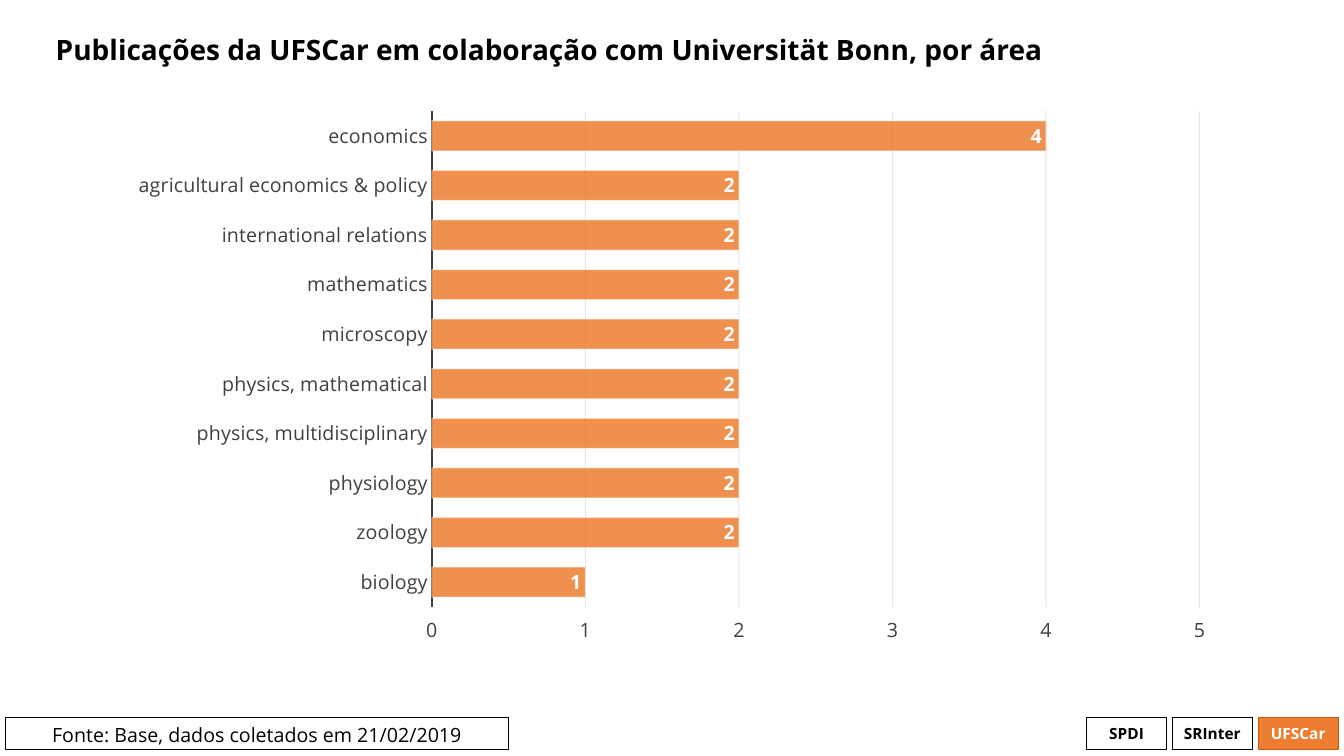
from lxml import etree
from pptx import Presentation
from pptx.chart.data import CategoryChartData
from pptx.dml.color import RGBColor
from pptx.enum.chart import XL_CHART_TYPE, XL_LABEL_POSITION, XL_TICK_LABEL_POSITION, XL_TICK_MARK
from pptx.enum.shapes import MSO_SHAPE
from pptx.enum.text import MSO_ANCHOR, MSO_AUTO_SIZE, PP_ALIGN
from pptx.oxml import parse_xml
from pptx.oxml.ns import nsdecls, qn
from pptx.util import Pt

RECT = MSO_SHAPE.RECTANGLE
BARS = XL_CHART_TYPE.BAR_CLUSTERED
NO_TICK = XL_TICK_MARK.NONE
HIGH = XL_TICK_LABEL_POSITION.HIGH
INSIDE_END = XL_LABEL_POSITION.INSIDE_END
NO_FIT = MSO_AUTO_SIZE.NONE
TOP, MIDDLE = MSO_ANCHOR.TOP, MSO_ANCHOR.MIDDLE
LEFT, CENTER = PP_ALIGN.LEFT, PP_ALIGN.CENTER
FONT = "Open Sans"
COLORS = {
    "black": "000000",
    "white": "FFFFFF",
    "orange": "ED7D31",
    "rust": "C55A11",
    "axis": "404040",
    "grid": "0D0D0D",
}


def set_font(font, size, color, bold=False):
    values = {"name": FONT, "size": Pt(size), "bold": bold}
    for name, value in values.items():
        setattr(font, name, value)
    font.color.rgb = RGBColor.from_string(COLORS[color])


def set_paint(fill, color, alpha=100):
    fill.solid()
    fill.fore_color.rgb = RGBColor.from_string(COLORS[color])
    if alpha < 100:
        clr = fill._xPr.find(qn("a:solidFill"))[0]
        etree.SubElement(clr, qn("a:alpha")).set("val", str(alpha * 1000))


prs = Presentation()
prs.slide_width, prs.slide_height = Pt(960), Pt(540)
slide = prs.slides.add_slide(prs.slide_layouts[5])

title = slide.shapes.title
box = {"left": 32.6, "top": 4.3, "width": 893.5, "height": 65.5}
for name, value in box.items():
    setattr(title, name, Pt(value))
tf = title.text_frame
tf.text = "Publicações da UFSCar em colaboração com Universität Bonn, por área"
tf.auto_size = NO_FIT
tf.word_wrap = True
tf.vertical_anchor = MIDDLE
p = tf.paragraphs[0]
p.alignment = LEFT
p.line_spacing = 0.9
set_font(p.runs[0].font, 20, "black", True)

areas = {
    "economics": 4,
    "agricultural economics & policy": 2,
    "international relations": 2,
    "mathematics": 2,
    "microscopy": 2,
    "physics, mathematical": 2,
    "physics, multidisciplinary": 2,
    "physiology": 2,
    "zoology": 2,
    "biology": 1,
}
data = CategoryChartData()
data.categories = list(areas)
data.add_series("Series 1", list(areas.values()))
chart_x, chart_y, chart_w, chart_h = 82.8, 71.3, 793.4, 396.7
chart = slide.shapes.add_chart(
    BARS, Pt(chart_x), Pt(chart_y), Pt(chart_w), Pt(chart_h), data).chart
chart.has_legend = False
chart.has_title = False
set_font(chart.font, 14, "black")

plot_box = {
    "x": (308.5 - chart_x) / chart_w,
    "y": (79.3 - chart_y) / chart_h,
    "w": 548.4 / chart_w,
    "h": 354.3 / chart_h,
}
area = chart._chartSpace.chart.plotArea
for old in area.findall(qn("c:layout")):
    area.remove(old)
parts = "".join(f'<c:{k} val="{v:.4f}"/>' for k, v in plot_box.items())
area.insert(0, parse_xml(
    f'<c:layout {nsdecls("c")}><c:manualLayout><c:layoutTarget val="inner"/>'
    f'<c:xMode val="edge"/><c:yMode val="edge"/>{parts}</c:manualLayout></c:layout>'))

cat_axis, val_axis = chart.category_axis, chart.value_axis
for axis in (cat_axis, val_axis):
    axis.major_tick_mark = axis.minor_tick_mark = NO_TICK
    set_font(axis.tick_labels.font, 14, "axis")
cat_axis.reverse_order = True
cat_axis.format.line.width = Pt(1.5)
set_paint(cat_axis.format.line.fill, "axis")
scale = {"minimum_scale": 0, "maximum_scale": 5, "major_unit": 1,
         "tick_label_position": HIGH}
for name, value in scale.items():
    setattr(val_axis, name, value)
val_axis.format.line.fill.background()
grid = val_axis.major_gridlines.format.line
grid.width = Pt(0.75)
set_paint(grid.fill, "grid", 10)

plot = chart.plots[0]
plot.gap_width = 65
plot.vary_by_categories = False
bars = plot.series[0]
bars.invert_if_negative = False
set_paint(bars.format.fill, "orange", 85)
bars.format.line.width = Pt(0.75)
set_paint(bars.format.line.fill, "white", 50)
labels = bars.data_labels
labels.show_value = True
labels.position = INSIDE_END
set_font(labels.font, 14, "white", True)

boxes = [("Fonte: Base, dados coletados em 21/02/2019",
          4, 359.3, 14, False, TOP, None, "black", "black")]
tags = [("SPDI", None, "black", "black"),
        ("SRInter", None, "black", "black"),
        ("UFSCar", "orange", "rust", "white")]
for i, (text, fill, line, color) in enumerate(tags):
    boxes.append((text, 776.2 + 61.3 * i, 57.1, 11, True, MIDDLE, fill, line, color))

for text, x, w, size, bold, anchor, fill, line, color in boxes:
    sp = slide.shapes.add_shape(RECT, Pt(x), Pt(512.6), Pt(w), Pt(23))
    sp.shadow.inherit = False
    if fill:
        set_paint(sp.fill, fill)
    else:
        sp.fill.background()
    set_paint(sp.line.fill, line)
    sp.line.width = Pt(0.75)
    tf = sp.text_frame
    tf.word_wrap = True
    tf.vertical_anchor = anchor
    p = tf.paragraphs[0]
    p.alignment = CENTER
    r = p.add_run()
    r.text = text
    set_font(r.font, size, color, bold)

prs.save("out.pptx")
